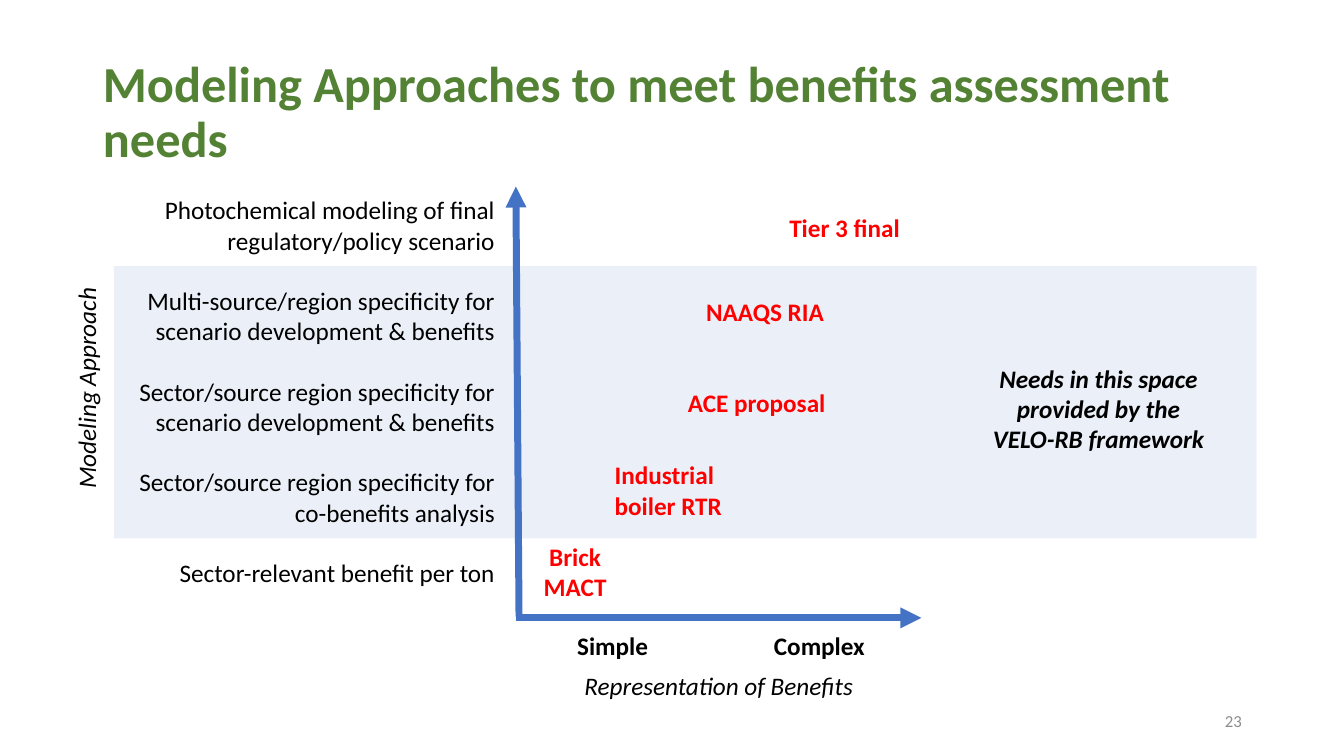
from lxml.etree import SubElement
from pptx import Presentation
from pptx.dml.color import RGBColor
from pptx.enum.shapes import MSO_CONNECTOR, MSO_SHAPE
from pptx.enum.text import MSO_ANCHOR, MSO_AUTO_SIZE, PP_ALIGN
from pptx.oxml.ns import qn
from pptx.util import Cm, Pt

COLORS = {
    "title": "548235",
    "axis": "4472C4",
    "text": "000000",
    "example": "FF0000",
    "number": "8C8C8C",
}
FONT = "Calibri"
LINE = 1.02  # height of a one-line label, in cm

APPROACHES = [
    "Photochemical modeling of final regulatory/policy scenario",
    "Multi-source/region specificity for scenario development & benefits",
    "Sector/source region specificity for scenario development & benefits",
    "Sector/source region specificity for co-benefits analysis",
    "Sector-relevant benefit per ton",
]

# Text, left, top, width, height, alignment
EXAMPLES = [
    ("Tier 3 final", 19.05, 5.23, 4.47, LINE, PP_ALIGN.CENTER),
    ("NAAQS RIA", 17.02, 7.34, 4.52, LINE, PP_ALIGN.CENTER),
    ("ACE proposal", 16.81, 9.63, 4.52, LINE, PP_ALIGN.CENTER),
    ("Industrial boiler RTR", 15.24, 11.46, 3.38, 1.8, PP_ALIGN.LEFT),
    ("Brick MACT", 12.88, 13.51, 3.23, 1.8, PP_ALIGN.CENTER),
]


def write_text(frame, *texts, size=18, color="text", bold=False, italic=False,
               align=PP_ALIGN.CENTER, anchor=MSO_ANCHOR.TOP, gap=0, spacing=1.0):
    """Fill a text frame with one paragraph per text."""
    frame.word_wrap = True
    frame.auto_size = MSO_AUTO_SIZE.NONE
    frame.vertical_anchor = anchor
    for index, text in enumerate(texts):
        para = frame.paragraphs[0] if index == 0 else frame.add_paragraph()
        para.alignment = align
        para.line_spacing = spacing
        para.space_before = Pt(gap if index else 0)
        span = para.add_run()
        span.text = text
        span.font.name = FONT
        span.font.size = Pt(size)
        span.font.bold = bold
        span.font.italic = italic
        span.font.color.rgb = RGBColor.from_string(COLORS[color])


def add_label(page, left, top, width, height, *texts, rotation=0, **style):
    box = page.shapes.add_textbox(Cm(left), Cm(top), Cm(width), Cm(height))
    box.rotation = rotation
    write_text(box.text_frame, *texts, **style)


def add_band(page, left, top, width, height, opacity):
    band = page.shapes.add_shape(MSO_SHAPE.RECTANGLE, Cm(left), Cm(top), Cm(width), Cm(height))
    band.shadow.inherit = False
    band.line.fill.background()
    band.fill.solid()
    band.fill.fore_color.rgb = RGBColor.from_string(COLORS["axis"])
    color = band.fill._xPr.find(qn("a:solidFill"))[0]
    SubElement(color, qn("a:alpha"), val=str(opacity * 1000))


def add_axis(page, *ends):
    axis = page.shapes.add_connector(MSO_CONNECTOR.STRAIGHT, *(Cm(end) for end in ends))
    axis.line.color.rgb = RGBColor.from_string(COLORS["axis"])
    axis.line.width = Pt(5)
    SubElement(axis.line._get_or_add_ln(), qn("a:tailEnd"), type="triangle")
    SubElement(axis._element.spPr, qn("a:effectLst"))


def add_title(page, text):
    title = page.shapes.title
    title.left, title.top, title.width, title.height = Cm(2.34), Cm(1.02), Cm(29.85), Cm(3.68)
    write_text(title.text_frame, text, size=36, color="title", bold=True,
               align=PP_ALIGN.LEFT, anchor=MSO_ANCHOR.MIDDLE, spacing=0.9)


def main():
    deck = Presentation()
    deck.slide_width, deck.slide_height = Cm(33.87), Cm(19.05)
    page = deck.slides.add_slide(deck.slide_layouts[5])

    # Shaded band and title
    add_band(page, 2.87, 6.71, 28.8, 6.86, opacity=10)
    add_title(page, "Modeling Approaches to meet benefits assessment needs")

    # Axes
    add_axis(page, 13, 15.57, 23.22, 15.57)
    add_axis(page, 13.08, 15.54, 13, 4.7)

    # Axis labels
    add_label(page, 2.97, 4.78, 9.75, 10.26, *APPROACHES, align=PP_ALIGN.RIGHT, gap=21.6)
    for text, left in (("Simple", 13.69), ("Complex", 18.9)):
        add_label(page, left, 15.75, 3.5, LINE, text, bold=True)
    add_label(page, 14.48, 16.76, 8.41, LINE, "Representation of Benefits",
              italic=True, align=PP_ALIGN.LEFT)
    add_label(page, -2.03, 9.27, 8.41, LINE, "Modeling Approach", italic=True, rotation=270)

    # Examples placed between the axes
    for text, left, top, width, height, align in EXAMPLES:
        add_label(page, left, top, width, height, text, color="example", bold=True, align=align)

    # Remark on the band and page number
    add_label(page, 24.61, 9.02, 6.15, 2.57,
              "Needs in this space provided by the VELO-RB framework", bold=True, italic=True)
    add_label(page, 23.93, 17.65, 7.62, LINE, "23", size=12, color="number",
              align=PP_ALIGN.RIGHT, anchor=MSO_ANCHOR.MIDDLE)

    deck.save("out.pptx")


if __name__ == "__main__":
    main()
